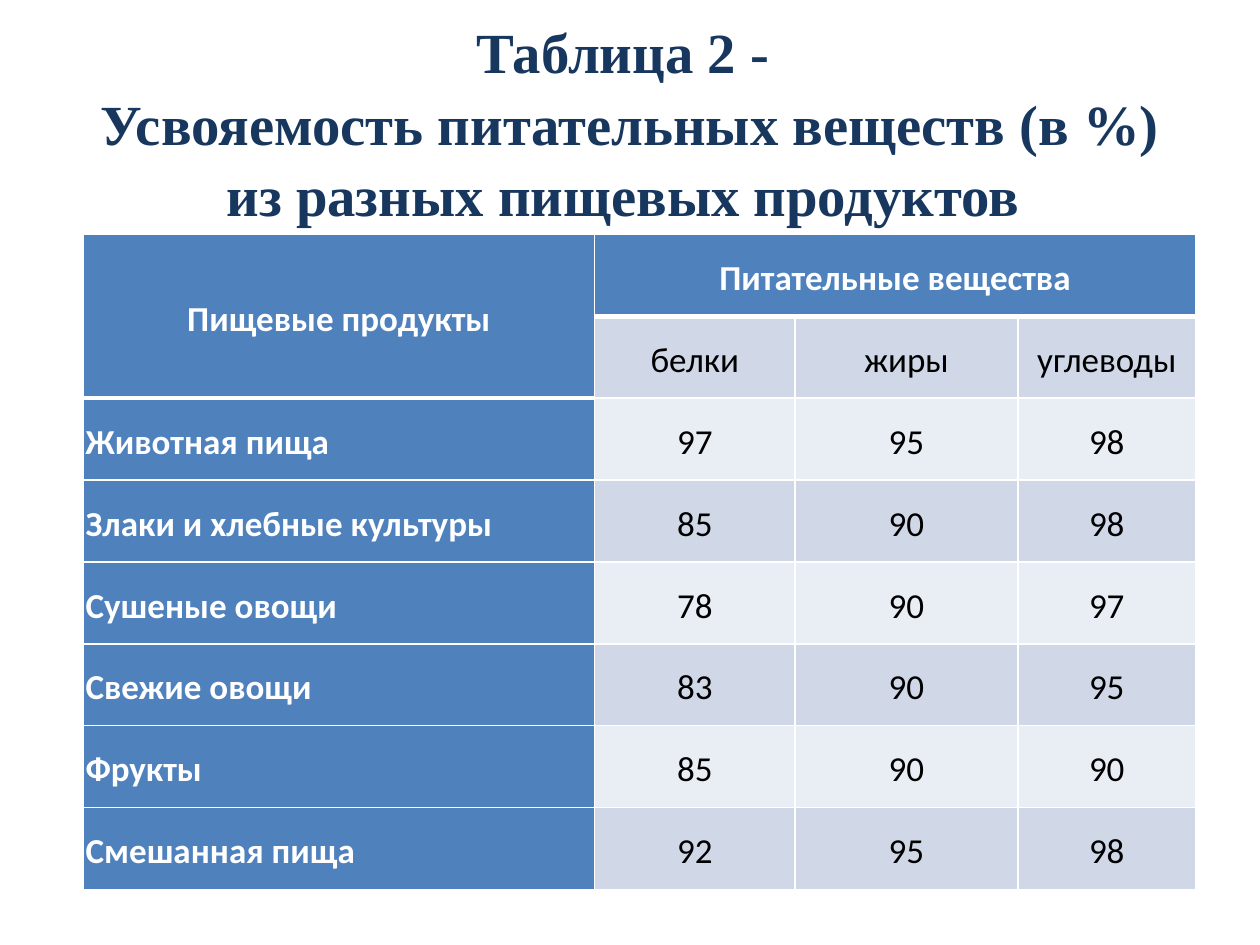
"""Build a slide with a table of nutrient digestibility by food product."""
from dataclasses import dataclass
from typing import Any

from lxml.etree import SubElement
from pptx import Presentation
from pptx.dml.color import RGBColor as RGB
from pptx.enum.text import MSO_ANCHOR as Anchor, MSO_AUTO_SIZE as AutoSize, PP_ALIGN as Align
from pptx.oxml.ns import qn
from pptx.util import Inches, Pt


@dataclass(frozen=True)
class Theme:
    title_font: str = "Times New Roman"
    table_font: str = "Calibri"
    title_size: float = 32.4
    table_size: float = 20
    title: str = "17375E"
    accent: str = "4F81BD"
    bands: tuple[str, str] = ("E9EDF4", "D0D8E8")
    light: str = "FFFFFF"
    dark: str = "000000"
    thin: float = 1
    thick: float = 3


@dataclass(frozen=True)
class Food:
    name: str
    proteins: int
    fats: int
    carbs: int

    def texts(self) -> list[str]:
        return [self.name, str(self.proteins), str(self.fats), str(self.carbs)]


THEME = Theme()
WIDTH, HEIGHT = Inches(10), Inches(7.5)
TITLE = "Таблица 2 - \vУсвояемость питательных веществ (в %) из разных пищевых продуктов "
COLUMNS = (4.06, 1.59, 1.77, 1.41)
HEADER = [
    ["Пищевые продукты", "Питательные вещества", "", ""],
    ["", "белки", "жиры", "углеводы"],
]
FOODS = [
    Food("Животная пища", 97, 95, 98),
    Food("Злаки и хлебные культуры", 85, 90, 98),
    Food("Сушеные овощи", 78, 90, 97),
    Food("Свежие овощи", 83, 90, 95),
    Food("Фрукты", 85, 90, 90),
    Food("Смешанная пища", 92, 95, 98),
]


def apply(obj: Any, values: dict[str, Any]) -> None:
    for name, value in values.items():
        setattr(obj, name, value)


def style_text(p: Any, font: str, size: float, color: str, bold: bool) -> None:
    for r in p.runs:
        apply(r.font, {"name": font, "size": Pt(size), "bold": bold})
        r.font.color.rgb = RGB.from_string(color)


def set_borders(cell: Any, top: float, bottom: float) -> None:
    tc_pr = cell._tc.get_or_add_tcPr()
    widths = {"a:lnL": THEME.thin, "a:lnR": THEME.thin, "a:lnT": top, "a:lnB": bottom}
    for i, (tag, width) in enumerate(widths.items()):
        ln = SubElement(tc_pr, qn(tag), w=str(Pt(width)))
        SubElement(SubElement(ln, qn("a:solidFill")), qn("a:srgbClr"), val=THEME.light)
        tc_pr.insert(i, ln)


def draw_cell(cell: Any, row: int, col: int, text: str) -> None:
    is_head = row == 0 or col == 0
    is_label = col == 0 and row >= len(HEADER)
    cell.text = text
    apply(cell, {"vertical_anchor": Anchor.MIDDLE} | {
        f"margin_{side}": Inches(0.02) for side in ("left", "right", "top", "bottom")})
    cell.fill.solid()
    cell.fill.fore_color.rgb = RGB.from_string(THEME.accent if is_head else THEME.bands[row % 2])
    p = cell.text_frame.paragraphs[0]
    apply(p, {"alignment": Align.LEFT if is_label else Align.CENTER, "line_spacing": 1.15})
    style_text(p, THEME.table_font, THEME.table_size,
               THEME.light if is_head else THEME.dark, is_head)
    head_end = 1 if col == 0 else 0
    set_borders(cell, THEME.thick if row == head_end + 1 else THEME.thin,
                THEME.thick if row == head_end else THEME.thin)


def draw_title(s: Any) -> None:
    sp = s.shapes.title
    apply(sp, {"left": int(WIDTH * 0.05), "top": Inches(0.61),
               "width": int(WIDTH * 0.9), "height": Inches(1.25)})
    tf = sp.text_frame
    tf.text = TITLE
    apply(tf, {"vertical_anchor": Anchor.MIDDLE, "word_wrap": True,
               "auto_size": AutoSize.NONE, "margin_bottom": Inches(0.6)})
    p = tf.paragraphs[0]
    apply(p, {"alignment": Align.CENTER, "line_spacing": 1.05})
    style_text(p, THEME.title_font, THEME.title_size, THEME.title, True)


def draw_table(s: Any) -> None:
    rows = HEADER + [food.texts() for food in FOODS]
    table = s.shapes.add_table(
        len(rows), len(COLUMNS), Inches(0.66), Inches(1.86),
        Inches(sum(COLUMNS)), Inches(0.65 * len(rows))).table
    for column, width in zip(table.columns, COLUMNS):
        column.width = Inches(width)
    for i, texts in enumerate(rows):
        for j, text in enumerate(texts):
            draw_cell(table.cell(i, j), i, j, text)
    table.cell(0, 0).merge(table.cell(1, 0))
    table.cell(0, 1).merge(table.cell(0, 3))


def main() -> None:
    prs = Presentation()
    apply(prs, {"slide_width": WIDTH, "slide_height": HEIGHT})
    s = prs.slides.add_slide(prs.slide_layouts[5])
    draw_title(s)
    draw_table(s)
    prs.save("out.pptx")


if __name__ == "__main__":
    main()
